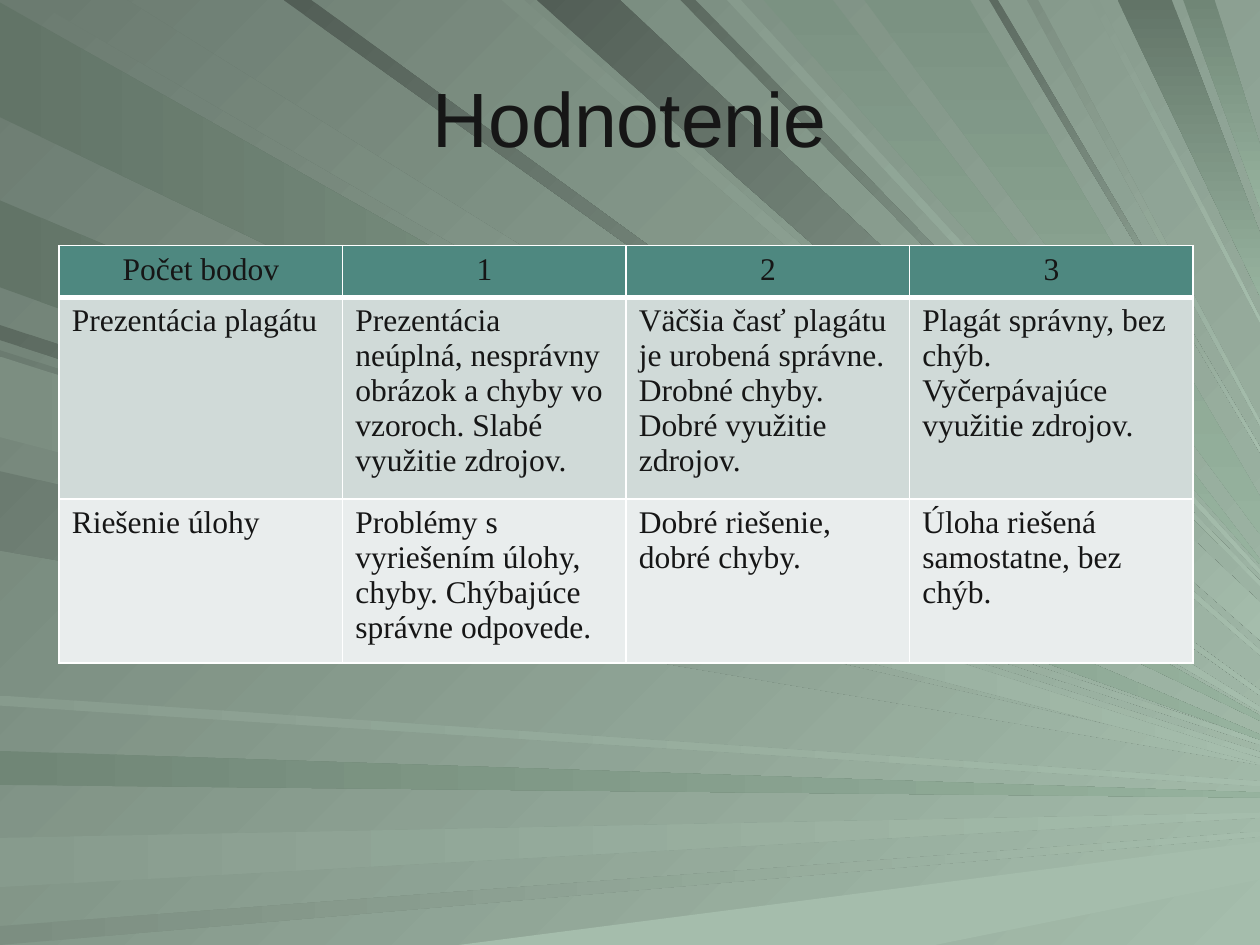
from lxml import etree
from pptx import Presentation
from pptx import util as u
from pptx.dml.color import RGBColor
from pptx.enum import text
from pptx.oxml.ns import qn

SAGE = RGBColor(0xA5, 0xBD, 0xAC)
GREEN = RGBColor(0x96, 0xB2, 0x9E)
INK = RGBColor(0x16, 0x16, 0x16)
WHITE = RGBColor(0xFF, 0xFF, 0xFF)
HEADER = RGBColor(0x4E, 0x88, 0x80)
BAND_DARK = RGBColor(0xD0, 0xDA, 0xD8)
BAND_LIGHT = RGBColor(0xE9, 0xED, 0xED)

WIDTH, HEIGHT = 10, 7.5
# How much of its colour a beam keeps where it starts
DEEP, DARK, MID, SOFT, LIGHT, FULL = 0.5, 0.56, 0.65, 0.75, 0.82, 1
# How tall a beam is where it meets the right edge
THIN, WIDE, BROAD = 0.04, 0.3, 0.5

# Starting edge, span along that edge, height on the right edge, spread, colour, shade
BEAMS = [
    ("left", 0.02, 0.93, 5.7, THIN, GREEN, MID),
    ("top", 0.26, 1.01, 5.63, THIN, SAGE, MID),
    ("left", 5.96, 6.23, 6.31, THIN, GREEN, SOFT),
    ("left", 6.65, 7.04, 6.47, THIN, SAGE, LIGHT),
    ("left", 7.35, 7.5, 6.62, THIN, SAGE, SOFT),
    ("bottom", 3.64, 7.42, 6.83, WIDE, SAGE, FULL),
    ("left", 2.58, 2.7, 5.89, THIN, SAGE, DARK),
    ("left", 1.59, 2.28, 5.85, THIN, GREEN, MID),
    ("top", 3.98, 4.16, 5.18, THIN, SAGE, SOFT),
    ("top", 4.26, 4.92, 4.93, WIDE, SAGE, DEEP),
    ("top", 5.4, 5.52, 4.63, THIN, SAGE, DARK),
    ("top", 6.06, 6.61, 4.46, THIN, GREEN, LIGHT),
    ("top", 8.87, 9.3, 2.1, BROAD, GREEN, MID),
    ("top", 9.39, 9.64, 1.4, BROAD, GREEN, SOFT),
    ("left", 2.78, 3.42, 5.99, THIN, SAGE, MID),
    ("left", 3.74, 4.37, 6.05, THIN, SAGE, MID),
    ("left", 5.52, 5.6, 6.22, THIN, SAGE, LIGHT),
    ("top", 2.25, 2.47, 5.5, THIN, SAGE, DEEP),
    ("top", 5.77, 5.88, 4.54, THIN, SAGE, LIGHT),
    ("top", 6.86, 7.7, 4.09, WIDE, GREEN, LIGHT),
    ("top", 7.85, 7.92, 3.57, THIN, SAGE, DARK),
    ("top", 8.15, 8.24, 3.36, THIN, SAGE, SOFT),
    ("top", 8.65, 8.72, 2.54, THIN, SAGE, LIGHT),
    ("left", 2.83, 3.47, 6.04, THIN, SAGE, SOFT),
]

ROWS = [
    ["Počet bodov", "1", "2", "3"],
    ["Prezentácia plagátu",
     "Prezentácia neúplná, nesprávny obrázok a chyby vo vzoroch. Slabé využitie zdrojov.",
     "Väčšia časť plagátu je urobená správne. Drobné chyby. Dobré využitie zdrojov.",
     "Plagát správny, bez chýb. Vyčerpávajúce využitie zdrojov."],
    ["Riešenie úlohy",
     "Problémy s vyriešením úlohy, chyby. Chýbajúce správne odpovede.",
     "Dobré riešenie, dobré chyby.",
     "Úloha riešená samostatne, bez chýb."],
]
ROW_FILLS = [HEADER, BAND_DARK, BAND_LIGHT]
ROW_HEIGHTS = [0.41, 1.48, 1.21]


def paint(fill, color, share, angle):
    """Fill from a shaded colour to the full one, turned clockwise by angle."""
    if share == FULL:
        fill.solid()
        fill.fore_color.rgb = color
        return
    fill.gradient()
    fill.gradient_angle = (360 - angle) % 360
    start, end = fill.gradient_stops
    start.color.rgb = RGBColor(*(round(channel * share) for channel in color))
    end.color.rgb = color


def beam_angle(edge, color, share):
    if edge == "left" and (color == GREEN or share >= SOFT):
        return 0
    return 90 if color == GREEN else 45


def add_beam(page, edge, first, last, end, spread, color, share):
    upper, lower = (WIDTH, end - spread / 2), (WIDTH, end + spread / 2)
    if edge == "left":
        corners = [(0, last), lower, upper, (0, first)]
    elif edge == "top":
        corners = [(first, 0), lower, upper, (last, 0)]
    else:
        corners = [(last, HEIGHT), lower, upper, (first, HEIGHT)]
    points = [(u.Inches(x), u.Inches(y)) for x, y in corners]
    builder = page.shapes.build_freeform(*points[0])
    builder.add_line_segments(points[1:], close=True)
    beam = builder.convert_to_shape()
    beam.shadow.inherit = False
    beam.line.fill.background()
    paint(beam.fill, color, share, beam_angle(edge, color, share))


def style(para, font_name, size):
    para.font.name = font_name
    para.font.size = u.Pt(size)
    para.font.color.rgb = INK


def add_title(page, title):
    box = page.shapes.add_textbox(u.Inches(0.5), u.Inches(0.3), u.Inches(9), u.Inches(1.25))
    frame = box.text_frame
    frame.word_wrap = True
    frame.vertical_anchor = text.MSO_ANCHOR.MIDDLE
    frame.text = title
    para = frame.paragraphs[0]
    para.alignment = text.PP_ALIGN.CENTER
    style(para, "Arial", 44)


def set_borders(cell, bottom):
    """Draw white cell borders, 1 pt wide except for the bottom one."""
    properties = cell._tc.get_or_add_tcPr()
    for index, (side, width) in enumerate(zip("LRTB", (1, 1, 1, bottom))):
        line = etree.Element(qn(f"a:ln{side}"), w=str(u.Pt(width)))
        fill = etree.SubElement(line, qn("a:solidFill"))
        etree.SubElement(fill, qn("a:srgbClr"), val=str(WHITE))
        properties.insert(index, line)


def add_score_table(page):
    table = page.shapes.add_table(len(ROWS), len(ROWS[0]), u.Inches(0.47), u.Inches(1.95),
                                  u.Inches(9), u.Inches(sum(ROW_HEIGHTS))).table
    for row_index, labels in enumerate(ROWS):
        is_header = row_index == 0
        table.rows[row_index].height = u.Inches(ROW_HEIGHTS[row_index])
        for column_index, label in enumerate(labels):
            cell = table.cell(row_index, column_index)
            cell.text = label
            cell.fill.solid()
            cell.fill.fore_color.rgb = ROW_FILLS[row_index]
            para = cell.text_frame.paragraphs[0]
            style(para, "Times New Roman", 18)
            para.font.bold = False
            if is_header:
                para.alignment = text.PP_ALIGN.CENTER
            set_borders(cell, 3 if is_header else 1)


def main():
    deck = Presentation()
    deck.slide_width, deck.slide_height = u.Inches(WIDTH), u.Inches(HEIGHT)
    page = deck.slides.add_slide(deck.slide_layouts[6])
    paint(page.background.fill, SAGE, MID, 45)
    for beam in BEAMS:
        add_beam(page, *beam)
    add_title(page, "Hodnotenie")
    add_score_table(page)
    deck.save("out.pptx")


if __name__ == "__main__":
    main()
